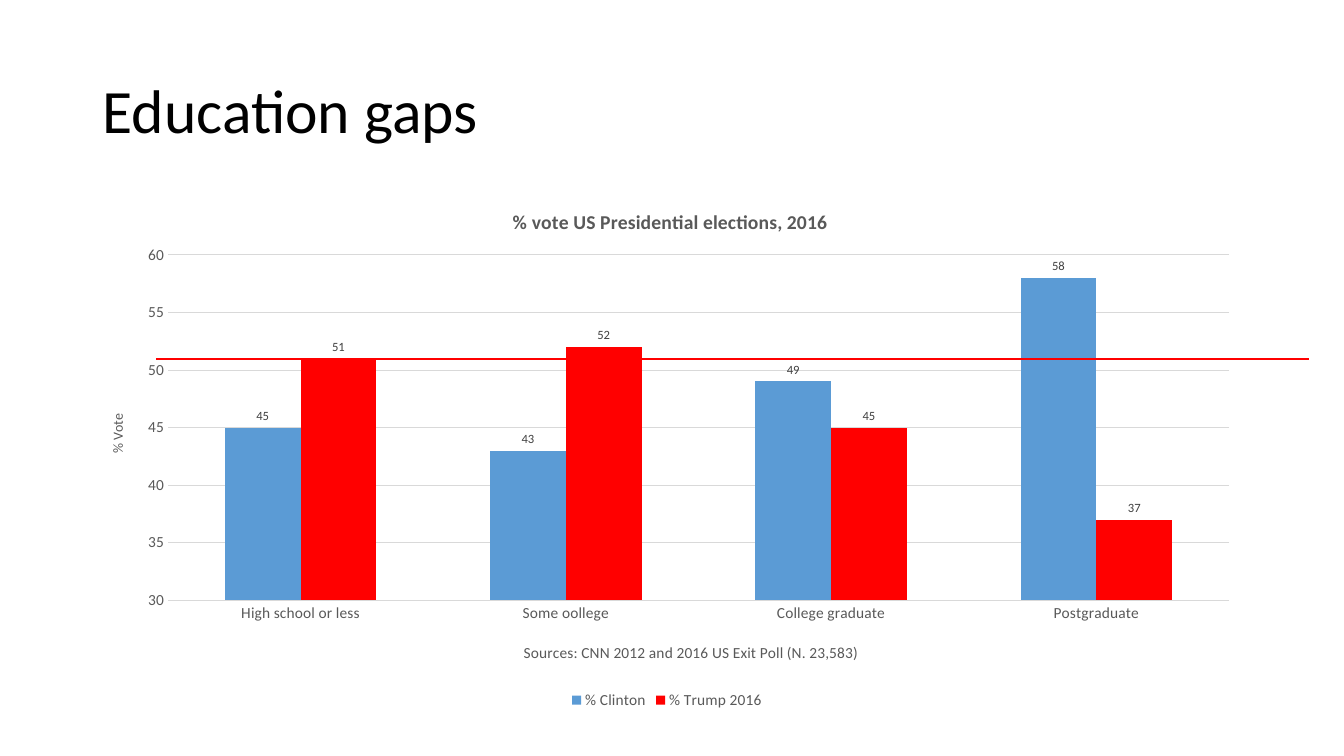
from lxml.etree import SubElement
from pptx import Presentation
from pptx.chart.data import CategoryChartData
from pptx.dml.color import RGBColor
from pptx.enum.chart import XL_CHART_TYPE, XL_LABEL_POSITION, XL_LEGEND_POSITION, XL_TICK_MARK
from pptx.enum.shapes import MSO_CONNECTOR
from pptx.enum.text import MSO_ANCHOR
from pptx.oxml import parse_xml
from pptx.oxml.ns import nsdecls, qn
from pptx.util import Inches, Pt

BLACK = RGBColor(0x00, 0x00, 0x00)
GRAY = RGBColor(0x59, 0x59, 0x59)
DARK_GRAY = RGBColor(0x40, 0x40, 0x40)
LIGHT_GRAY = RGBColor(0xD9, 0xD9, 0xD9)
BLUE = RGBColor(0x5B, 0x9B, 0xD5)
RED = RGBColor(0xFF, 0x00, 0x00)


def set_font(font, size, color, bold=False):
    font.name = "Calibri"
    font.size = Pt(size)
    font.color.rgb = color
    font.bold = bold


def place(element, index, target="", **fractions):
    """Give a chart part a fixed place, in fractions of the chart area."""
    for old in element.findall(qn("c:layout")):
        element.remove(old)
    layout = parse_xml(f"<c:layout {nsdecls('c')}><c:manualLayout/></c:layout>")
    manual = layout[0]
    if target:
        SubElement(manual, qn("c:layoutTarget")).set("val", target)
    for side in ("x", "y"):
        SubElement(manual, qn(f"c:{side}Mode")).set("val", "edge")
    for name, value in fractions.items():
        SubElement(manual, qn(f"c:{name}")).set("val", str(value))
    element.insert(index, layout)


deck = Presentation()
deck.slide_width = Inches(13.33)
deck.slide_height = Inches(7.5)
page = deck.slides.add_slide(deck.slide_layouts[6])

# Slide title
box = page.shapes.add_textbox(Inches(0.92), Inches(0.4), Inches(11.5), Inches(1.45))
box.text_frame.word_wrap = True
box.text_frame.vertical_anchor = MSO_ANCHOR.MIDDLE
para = box.text_frame.paragraphs[0]
para.text = "Education gaps"
para.line_spacing = 0.9
set_font(para.font, 44, BLACK)

# Vote shares by education
data = CategoryChartData()
data.categories = ["High school or less", "Some oollege", "College graduate", "Postgraduate"]
data.add_series("% Clinton", (45, 43, 49, 58))
data.add_series("% Trump 2016", (51, 52, 45, 37))
chart = page.shapes.add_chart(
    XL_CHART_TYPE.COLUMN_CLUSTERED,
    Inches(0.82), Inches(1.82), Inches(11.59), Inches(5.26), data,
).chart
set_font(chart.font, 10, BLACK)

# Columns and their labels
plot = chart.plots[0]
plot.gap_width = 150
plot.overlap = 0
plot.vary_by_categories = False
for series, color in zip(plot.series, (BLUE, RED)):
    series.format.fill.solid()
    series.format.fill.fore_color.rgb = color
    labels = series.data_labels
    labels.show_value = True
    labels.position = XL_LABEL_POSITION.OUTSIDE_END
    set_font(labels.font, 9, DARK_GRAY)

# Axes
categories, values = chart.category_axis, chart.value_axis
for axis in (categories, values):
    axis.major_tick_mark = XL_TICK_MARK.NONE
    axis.minor_tick_mark = XL_TICK_MARK.NONE
    set_font(axis.tick_labels.font, 11, GRAY)
values.minimum_scale = 30
values.maximum_scale = 60
values.major_unit = 5
values.format.line.fill.background()
for line in (categories.format.line, values.major_gridlines.format.line):
    line.color.rgb = LIGHT_GRAY
    line.width = Pt(0.75)

# Chart and axis titles
chart.has_title = True
titles = [
    (chart.chart_title, "% vote US Presidential elections, 2016", 14, True, 0.365, 0.04),
    (categories.axis_title, "Sources: CNN 2012 and 2016 US Exit Poll (N. 23,583)", 11, False, 0.375, 0.86),
    (values.axis_title, "% Vote", 10, False, 0.02, 0.43),
]
for title, text, size, bold, left, top in titles:
    para = title.text_frame.paragraphs[0]
    para.text = text
    set_font(para.font, size, GRAY, bold)
    place(title._element, 1, x=left, y=top)
turned = values.axis_title._element.find(".//" + qn("a:bodyPr"))
turned.set("rot", "-5400000")
turned.set("vert", "horz")
place(chart._chartSpace.chart.plotArea, 0, "inner", x=0.073, y=0.135, w=0.908, h=0.651)

# Legend
chart.has_legend = True
chart.legend.position = XL_LEGEND_POSITION.BOTTOM
chart.legend.include_in_layout = False
set_font(chart.legend.font, 11, GRAY)

# Reference line at 51 percent
rule = page.shapes.add_connector(
    MSO_CONNECTOR.STRAIGHT, Inches(1.55), Inches(3.56), Inches(12.98), Inches(3.56)
)
rule.line.color.rgb = RED
rule.line.width = Pt(1)
SubElement(rule._element.spPr, qn("a:effectLst"))

deck.save("out.pptx")
